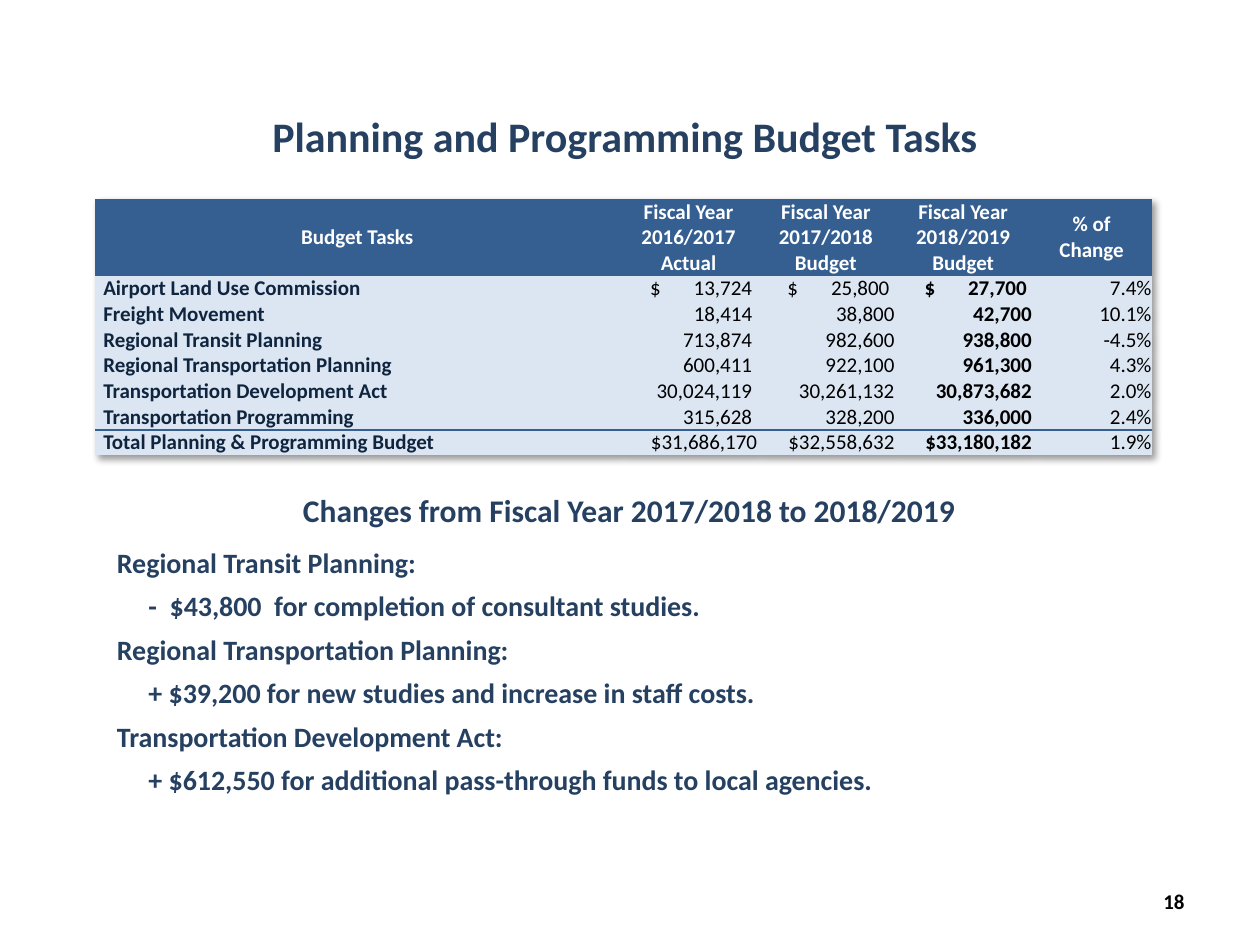
import pptx
import pptx.dml.color
import pptx.enum.text
import pptx.oxml
import pptx.oxml.ns
import pptx.util
from pptx.util import Inches

RGBColor = pptx.dml.color.RGBColor
ALIGN = pptx.enum.text.PP_ALIGN
ANCHOR = pptx.enum.text.MSO_ANCHOR
NAVY = RGBColor(0x25, 0x40, 0x61)
DARK_NAVY = RGBColor(0x0F, 0x24, 0x3E)
HEADER_BLUE = RGBColor(0x36, 0x5F, 0x91)
PALE_BLUE = RGBColor(0xDC, 0xE6, 0xF2)
WHITE = RGBColor(0xFF, 0xFF, 0xFF)
BLACK = RGBColor(0, 0, 0)
NO_STYLE = "{2D5ABB26-0587-4C30-8999-92F81FD0307C}"


def format_text(frame, size, color, align, bold=True):
    for paragraph in frame.paragraphs:
        paragraph.alignment = align
        for run in paragraph.runs:
            run.font.name = "Calibri"
            run.font.size = pptx.util.Pt(size)
            run.font.bold = bold
            run.font.color.rgb = color


def xml(markup):
    namespace = pptx.oxml.ns.nsdecls("a")
    return pptx.oxml.parse_xml(markup.replace(" ", f" {namespace} ", 1))


presentation = pptx.Presentation()
presentation.slide_width = Inches(10)
presentation.slide_height = Inches(7.5)
slide = presentation.slides.add_slide(presentation.slide_layouts[5])

# Title
title = slide.shapes.title
title.left, title.top = Inches(1.42), Inches(0.83)
title.width, title.height = Inches(7.08), Inches(0.5)
title.text_frame.text = "Planning and Programming Budget Tasks"
format_text(title.text_frame, 24, NAVY, ALIGN.CENTER)

# Budget table
budget_rows = [
    ["Budget Tasks", "Fiscal Year 2016/2017\nActual", "Fiscal Year 2017/2018\nBudget",
     "Fiscal Year 2018/2019\nBudget", "% of Change"],
    ["Airport Land Use Commission", "$\t13,724", "$\t25,800", "$\t27,700", "7.4%"],
    ["Freight Movement", "18,414", "38,800", "42,700", "10.1%"],
    ["Regional Transit Planning", "713,874", "982,600", "938,800", "-4.5%"],
    ["Regional Transportation Planning", "600,411", "922,100", "961,300", "4.3%"],
    ["Transportation Development Act", "30,024,119", "30,261,132", "30,873,682", "2.0%"],
    ["Transportation Programming", "315,628", "328,200", "336,000", "2.4%"],
    ["Total Planning & Programming Budget", "$31,686,170", "$32,558,632", "$33,180,182", "1.9%"],
]
total_row = len(budget_rows) - 1
budget = slide.shapes.add_table(len(budget_rows), 5, Inches(0.75), Inches(1.58),
                                Inches(8.39), Inches(2)).table
budget.first_row = budget.horz_banding = False
table_properties = budget._tbl.tblPr
table_properties.find(pptx.oxml.ns.qn("a:tableStyleId")).text = NO_STYLE
table_properties.insert(0, xml(
    '<a:effectLst ><a:outerShdw blurRad="50800" dist="38100" dir="2700000" algn="tl" '
    'rotWithShape="0"><a:srgbClr val="000000"><a:alpha val="40000"/></a:srgbClr>'
    '</a:outerShdw></a:effectLst>'))
for column, width in zip(budget.columns, [4.17, 1.09, 1.09, 1.09, 0.95]):
    column.width = Inches(width)

for r, values in enumerate(budget_rows):
    budget.rows[r].height = Inches(0.2 if r else 0.6)
    for c, value in enumerate(values):
        cell = budget.cell(r, c)
        cell.text_frame.text = value
        cell.fill.solid()
        cell.fill.fore_color.rgb = PALE_BLUE if r else HEADER_BLUE
        cell.vertical_anchor = ANCHOR.BOTTOM if r else ANCHOR.MIDDLE
        side_margin = Inches(0.07 if r == 0 or c == 0 else 0)
        cell.margin_left = cell.margin_right = side_margin
        cell.margin_top = cell.margin_bottom = 0
        if r == 0:
            format_text(cell.text_frame, 12, WHITE, ALIGN.CENTER)
        elif c == 0:
            format_text(cell.text_frame, 12, DARK_NAVY, ALIGN.LEFT)
        elif "\t" in value:
            # Dollar sign on the left, amount at a right tab
            cell.margin_left = Inches(0.24)
            cell.text_frame.paragraphs[0]._p.get_or_add_pPr().append(
                xml(f'<a:tabLst ><a:tab pos="{Inches(0.81)}" algn="r"/></a:tabLst>'))
            format_text(cell.text_frame, 12, BLACK, ALIGN.LEFT, c == 3)
        else:
            if c == 1 and r < total_row:
                cell.margin_right = Inches(0.04)
            format_text(cell.text_frame, 12, BLACK, ALIGN.RIGHT, c == 3)
        # Rule above the total
        if r >= total_row - 1:
            edge = "lnT" if r == total_row else "lnB"
            cell._tc.get_or_add_tcPr().insert(0, xml(
                f'<a:{edge} w="{pptx.util.Pt(1.5)}"><a:solidFill>'
                f'<a:srgbClr val="{HEADER_BLUE}"/></a:solidFill></a:{edge}>'))

# Subheading, list of changes and page number
changes = "\n".join([
    "Regional Transit Planning:",
    "-  $43,800  for completion of consultant studies.",
    "Regional Transportation Planning:",
    "+ $39,200 for new studies and increase in staff costs.",
    "Transportation Development Act:",
    "+ $612,550 for additional pass-through funds to local agencies.",
])
text_blocks = [
    ("Changes from Fiscal Year 2017/2018 to 2018/2019", (1.08, 3.85, 7.83, 0.4),
     18, NAVY, ALIGN.CENTER, ANCHOR.TOP),
    (changes, (0.83, 4.28, 8.58, 2.14), 16, NAVY, ALIGN.LEFT, ANCHOR.TOP),
    ("18", (7.17, 6.95, 2.33, 0.4), 12, BLACK, ALIGN.RIGHT, ANCHOR.MIDDLE),
]
for text, box, size, color, align, anchor in text_blocks:
    frame = slide.shapes.add_textbox(*map(Inches, box)).text_frame
    frame.word_wrap = True
    frame.vertical_anchor = anchor
    frame.text = text
    format_text(frame, size, color, align)
    for i, paragraph in enumerate(frame.paragraphs):
        if i:
            paragraph.space_before = pptx.util.Pt(5.6)
        if i % 2:
            paragraph._p.get_or_add_pPr().set("marL", str(Inches(0.25)))

presentation.save("out.pptx")
